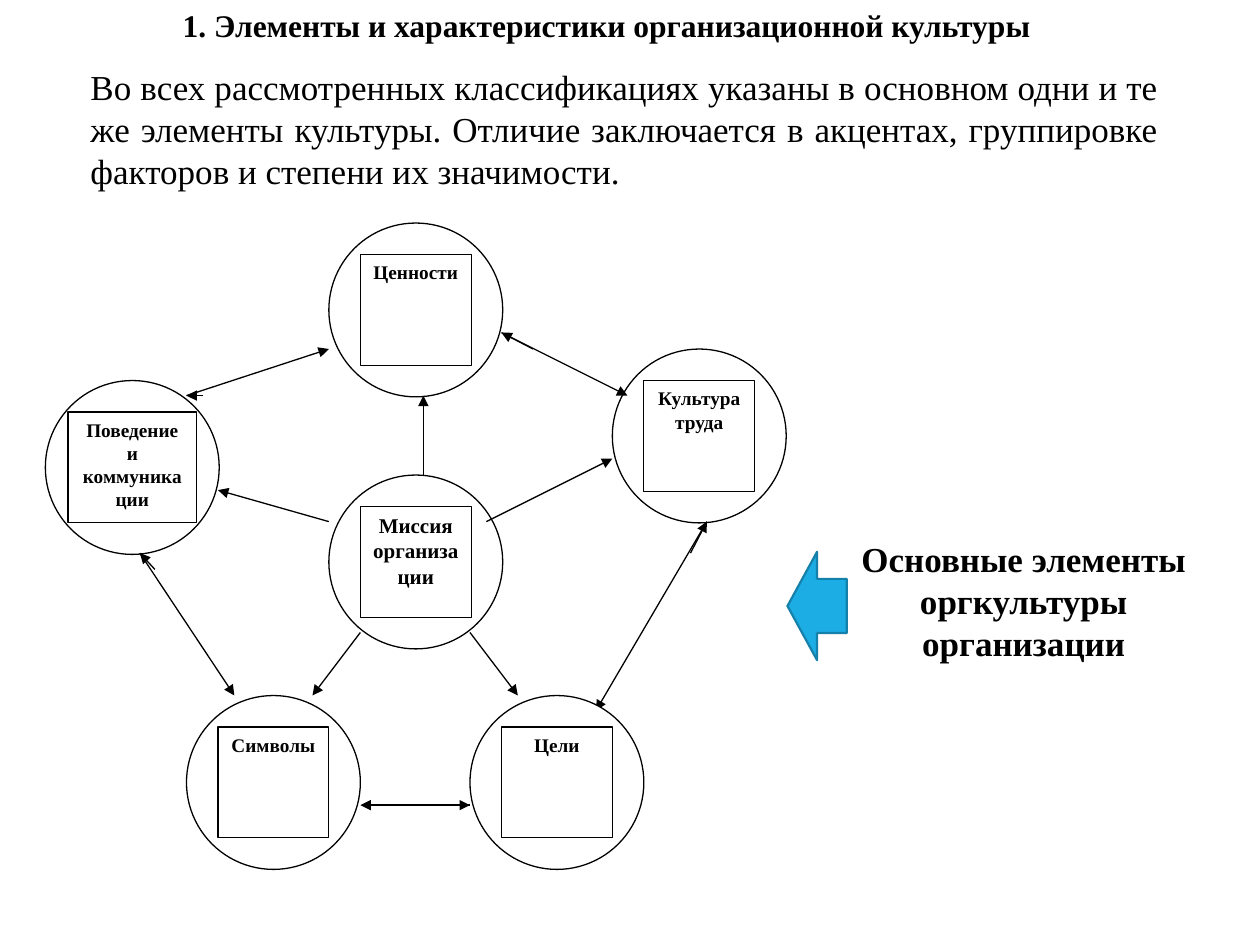
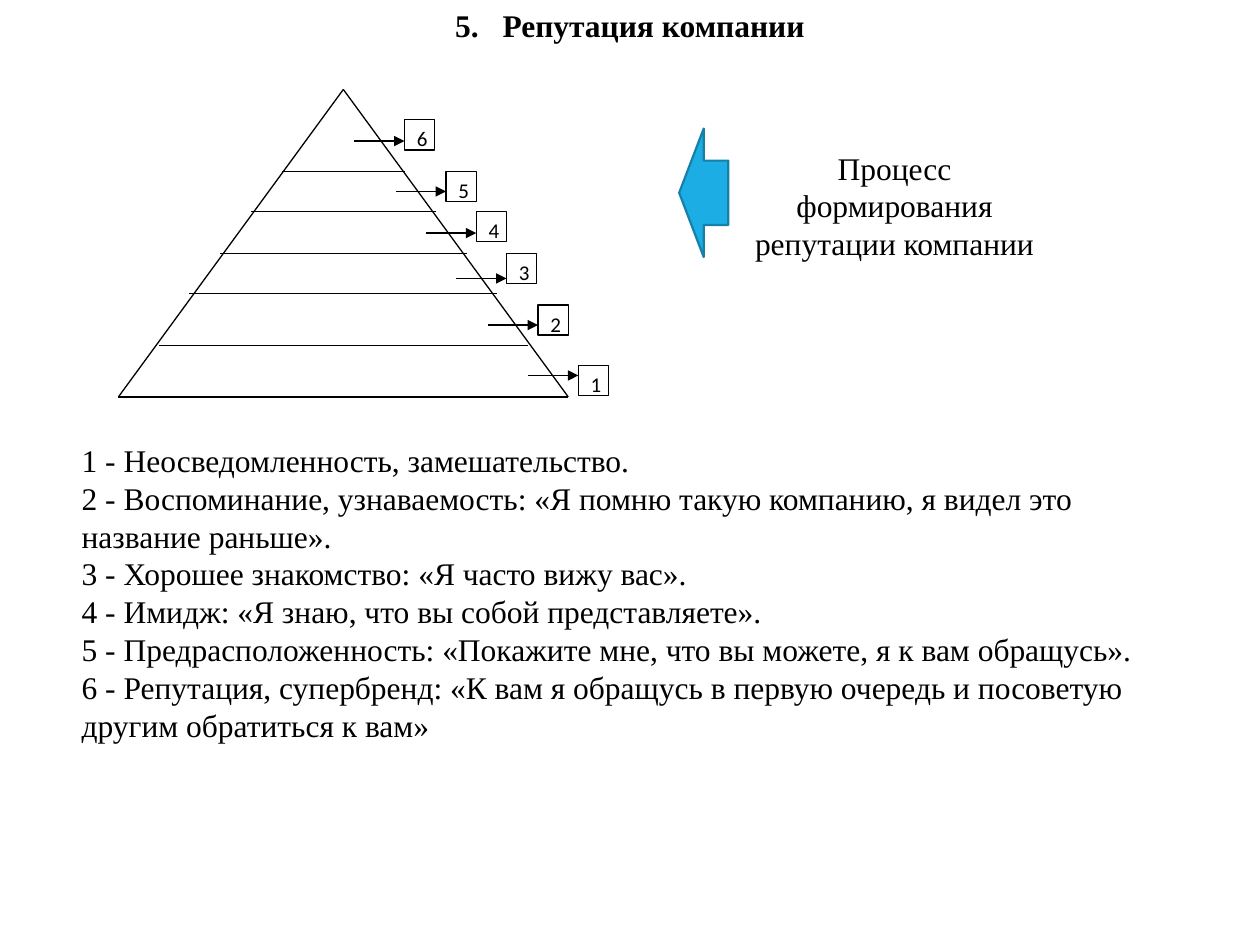
from dataclasses import dataclass
from lxml.etree import SubElement
from pptx import Presentation
from pptx.dml.color import RGBColor
from pptx.enum.shapes import MSO_CONNECTOR, MSO_SHAPE
from pptx.enum.text import MSO_ANCHOR, PP_ALIGN
from pptx.oxml.ns import qn
from pptx.util import Pt

PX = 9144


@dataclass(frozen=True)
class Theme:
    """Colours, fonts and type sizes shared by the slides."""
    ink: str = "000000"
    paper: str = "FFFFFF"
    accent: str = "1CADE4"
    accent_line: str = "1580A9"
    serif: str = "Times New Roman"
    sans: str = "Calibri"
    title: int = 18
    lead: int = 20
    body: int = 18
    core: int = 12
    node: int = 11
    tag: int = 12
    thin: float = 0.75
    thick: float = 1.25


T = Theme()

NODE = 138
NODE_BOX = 88
MISSION = (225, 200, "Миссия\nорганизации", NODE_BOX, T.core)
UPPER_NODES = [
    (225, 0, "Ценности", NODE_BOX, T.node),
    (450, 100, "Культура\nтруда", NODE_BOX, T.node),
    (0, 125, "Поведение и коммуникации", 102, T.node),
    MISSION,
]
LOWER_NODES = [
    (112, 375, "Символы", NODE_BOX, T.node),
    (337, 375, "Цели", NODE_BOX, T.node),
]
MISSION_LINKS = [
    (300, 200, 300, 137), (350, 237, 450, 187), (225, 237, 137, 212),
    (250, 325, 212, 375), (337, 325, 375, 375),
]
RING_LINKS = [
    (75, 262, 150, 375), (112, 137, 225, 100), (362, 87, 462, 137),
    (525, 237, 437, 387), (337, 462, 250, 462),
]
RETURN_LINKS = [
    (512, 262, 525, 237), (312, 462, 337, 462), (87, 275, 75, 262),
    (125, 137, 112, 137), (387, 100, 362, 87),
]

LEVEL_TOPS = [65, 97, 130, 162, 203]
TAGS = [
    (227, 24, 41), (260, 65, 81), (284, 97, 114),
    (308, 130, 150), (333, 171, 187), (365, 219, 227),
]
STAGES = """1 - Неосведомленность, замешательство.
2 - Воспоминание, узнаваемость: «Я помню такую компанию, я видел это название раньше».
3 - Хорошее знакомство: «Я часто вижу вас».
4 - Имидж: «Я знаю, что вы собой представляете».
5 - Предрасположенность: «Покажите мне, что вы можете, я к вам обращусь».
6 - Репутация, супербренд: «К вам я обращусь в первую очередь и посоветую другим обратиться к вам»"""


def emu(*lengths):
    """Turn px lengths into EMU."""
    return [round(n * PX) for n in lengths]


def rgb(code):
    """Turn a hex code into a colour."""
    return RGBColor.from_string(code)


def write(sp, text, size, font=T.serif, bold=False, align=PP_ALIGN.CENTER,
          anchor=MSO_ANCHOR.TOP):
    """Fill a shape with text, one paragraph a line."""
    tf = sp.text_frame
    tf.text = text
    tf.word_wrap = True
    tf.vertical_anchor = anchor
    for p in tf.paragraphs:
        p.alignment = align
        for r in p.runs:
            r.font.size = Pt(size)
            r.font.name = font
            r.font.bold = bold
            r.font.color.rgb = rgb(T.ink)


def label(s, box, text, size, **style):
    """Add a text box."""
    sp = s.shapes.add_textbox(*emu(*box))
    write(sp, text, size, **style)
    return sp


def shape(s, kind, box, fill=T.paper, line=T.ink, width=T.thin):
    """Add a filled preset shape, outlined unless line is None."""
    sp = s.shapes.add_shape(kind, *emu(*box))
    sp.shadow.inherit = False
    sp.fill.solid()
    sp.fill.fore_color.rgb = rgb(fill)
    if line is None:
        sp.line.fill.background()
    else:
        sp.line.color.rgb = rgb(line)
        sp.line.width = Pt(width)
    return sp


def link(s, x, y, ends, arrow=False):
    """Draw a thin line whose ends are relative to x, y."""
    x1, y1, x2, y2 = ends
    c = s.shapes.add_connector(MSO_CONNECTOR.STRAIGHT,
                               *emu(x + x1, y + y1, x + x2, y + y2))
    c.line.color.rgb = rgb(T.ink)
    c.line.width = Pt(T.thin)
    if arrow:
        SubElement(c.line._get_or_add_ln(), qn("a:tailEnd"), type="triangle")
    SubElement(c._element.spPr, qn("a:effectLst"))


def title(s, box, text, **style):
    """Add the bold slide title."""
    return label(s, box, text, T.title, bold=True, **style)


def numbered_title(s, box, number, text):
    """Add a title whose number is set off by a widened space."""
    sp = title(s, box, number, anchor=MSO_ANCHOR.MIDDLE)
    p = sp.text_frame.paragraphs[0]
    for part in (" ", text):
        r = p.add_run()
        r.text = part
        r.font.size, r.font.name, r.font.bold = Pt(T.title), T.serif, True
        r.font.color.rgb = rgb(T.ink)
    p.runs[1]._r.get_or_add_rPr().set("spc", "900")


def pointer(s, box):
    """Add the blue block arrow that points at a diagram."""
    shape(s, MSO_SHAPE.LEFT_ARROW, box, T.accent, T.accent_line, T.thick)


def culture_diagram(s, x, y):
    """Draw the culture elements around the mission."""
    def circles(nodes):
        for nx, ny, *_ in nodes:
            shape(s, MSO_SHAPE.OVAL, (x + nx, y + ny, NODE, NODE))

    circles(UPPER_NODES)
    for ends in MISSION_LINKS + RING_LINKS + RETURN_LINKS:
        link(s, x, y, ends, arrow=True)
    circles(LOWER_NODES)
    for nx, ny, text, w, size in UPPER_NODES + LOWER_NODES:
        box = (x + nx + (NODE - w) / 2, y + ny + (NODE - NODE_BOX) / 2,
               w, NODE_BOX)
        write(shape(s, MSO_SHAPE.RECTANGLE, box), text, size, bold=True)


def pyramid(s, x, y, w, h):
    """Draw the reputation pyramid with its numbered levels."""
    mid = w / 2
    for ends in ((mid, 0, 0, h), (mid, 0, w, h), (0, h, w, h)):
        link(s, x, y, ends)
    for i, top in enumerate(LEVEL_TOPS):
        half = 49 + 24.4 * i
        link(s, x, y, (mid - half, top, mid + half, top))
    for i, (tx, ty, ay) in enumerate(TAGS):
        link(s, x, y, (tx - 40, ay, tx, ay), arrow=True)
        sp = shape(s, MSO_SHAPE.RECTANGLE, (x + tx, y + ty, 24, 24))
        write(sp, str(len(TAGS) - i), T.tag, font=T.sans)


def culture_slide(s):
    """Build the slide on the elements of culture."""
    title(s, (36, 0, 891, 40),
          "1. Элементы и характеристики организационной культуры")
    label(s, (62, 47, 867, 111),
          "Во всех рассмотренных классификациях указаны в основном одни и те "
          "же элементы культуры. Отличие заключается в акцентах, группировке "
          "факторов и степени их значимости.",
          T.lead, align=PP_ALIGN.JUSTIFY)
    culture_diagram(s, 36, 177)
    label(s, (656, 422, 313, 111),
          "Основные элементы оргкультуры организации", T.lead, bold=True)
    pointer(s, (625, 438, 47, 86))


def reputation_slide(s):
    """Build the slide on company reputation."""
    numbered_title(s, (0, 0, 1000, 40), "5.", "Репутация компании")
    pyramid(s, 94, 71, 357, 244)
    legend = shape(s, MSO_SHAPE.RECTANGLE, (55, 344, 867, 252), line=None)
    write(legend, STAGES, T.body, align=PP_ALIGN.LEFT,
          anchor=MSO_ANCHOR.MIDDLE)
    label(s, (585, 113, 250, 101),
          "Процесс формирования репутации компании", T.body)
    pointer(s, (539, 102, 39, 102))


def main():
    """Build and save the presentation."""
    prs = Presentation()
    prs.slide_width, prs.slide_height = emu(1000, 750)
    for build in (culture_slide, reputation_slide):
        build(prs.slides.add_slide(prs.slide_layouts[6]))
    prs.save("out.pptx")


if __name__ == "__main__":
    main()
